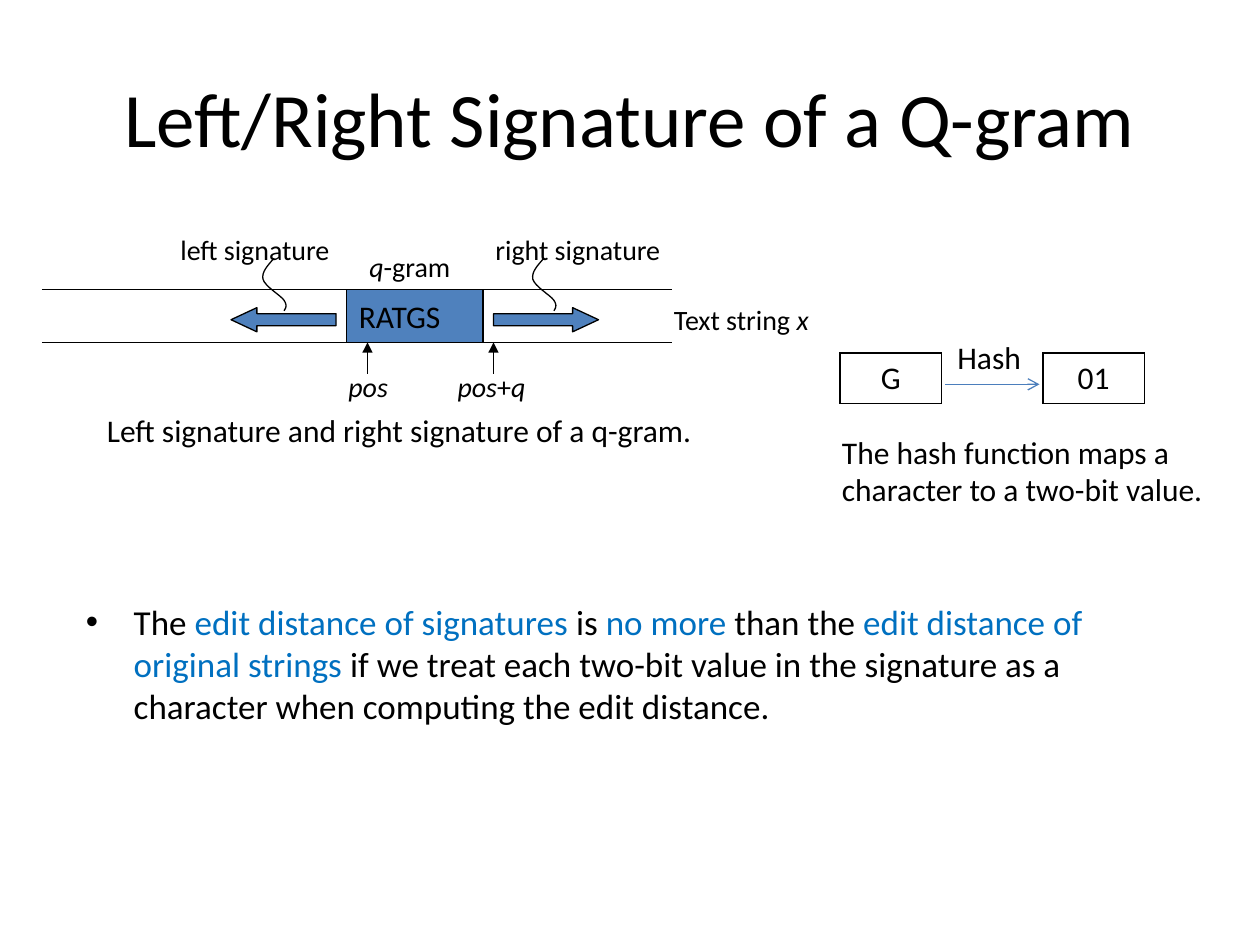
from lxml.etree import SubElement
from pptx import Presentation
from pptx.dml.color import RGBColor
from pptx.enum.shapes import MSO_CONNECTOR, MSO_SHAPE
from pptx.enum.text import MSO_ANCHOR, PP_ALIGN
from pptx.oxml import parse_xml
from pptx.oxml.ns import nsdecls, qn
from pptx.util import Inches, Pt

BLACK = RGBColor(0x00, 0x00, 0x00)
BLUE = RGBColor(0x4F, 0x81, 0xBD)
HASH_BLUE = RGBColor(0x4B, 0x7E, 0xBC)
ACCENT = RGBColor(0x00, 0x70, 0xC0)

ITALIC = {"italic": True}
MARKED = {"color": ACCENT}


def grid(*units):
    """Turn twelfths of an inch (120 columns by 90 rows) into lengths."""
    return [Inches(unit / 12) for unit in units]


def bezier(start, c1, c2, end, steps=8):
    """Points along a cubic curve, without its start."""
    for step in range(1, steps + 1):
        t = step / steps
        u = 1 - t
        yield tuple(u**3 * a + 3 * u * u * t * b + 3 * u * t * t * c + t**3 * d
                    for a, b, c, d in zip(start, c1, c2, end))


class SignatureSlide:
    font = "Calibri"
    line_width = Pt(0.75)

    def __init__(self, presentation):
        self.slide = presentation.slides.add_slide(presentation.slide_layouts[5])
        self.shapes = self.slide.shapes

    def fill_text(self, frame, parts, size, align=PP_ALIGN.LEFT):
        """Fill the first paragraph with plain strings or (text, format) pairs."""
        paragraph = frame.paragraphs[0]
        paragraph.alignment = align
        for part in parts:
            wording, changes = (part, {}) if isinstance(part, str) else part
            run = paragraph.add_run()
            run.text = wording
            look = {"name": self.font, "size": Pt(size), "color": BLACK} | changes
            run.font.color.rgb = look.pop("color")
            for key, value in look.items():
                setattr(run.font, key, value)
        return paragraph

    def title(self, wording):
        heading = self.shapes.title
        place = zip(("left", "top", "width", "height"), grid(6, 3.6, 108, 15))
        for key, value in place:
            setattr(heading, key, value)
        heading.text_frame.vertical_anchor = MSO_ANCHOR.MIDDLE
        self.fill_text(heading.text_frame, [wording], 44, PP_ALIGN.CENTER)

    def label(self, column, row, columns, *parts, size=16, rows=4.4):
        frame = self.shapes.add_textbox(*grid(column, row, columns, rows)).text_frame
        frame.word_wrap = True
        return self.fill_text(frame, parts, size)

    def bullet(self, column, row, columns, rows, *parts):
        paragraph = self.label(column, row, columns, *parts, size=20, rows=rows)
        properties = paragraph._p.get_or_add_pPr()
        properties.set("marL", str(Inches(0.38)))
        properties.set("indent", str(-Inches(0.38)))
        SubElement(properties, qn("a:buFont"), typeface="Arial")
        SubElement(properties, qn("a:buChar"), char="•")

    def outline(self, item, color=BLACK):
        item.line.color.rgb = color
        item.line.width = self.line_width

    def block(self, kind, column, row, columns, rows):
        block = self.shapes.add_shape(kind, *grid(column, row, columns, rows))
        block.shadow.inherit = False
        block.fill.solid()
        block.fill.fore_color.rgb = BLUE
        self.outline(block)
        return block

    def line(self, start, end, color=BLACK, head=None):
        line = self.shapes.add_connector(MSO_CONNECTOR.STRAIGHT, *grid(*start, *end))
        self.outline(line, color)
        if head:
            SubElement(line.line._get_or_add_ln(), qn("a:tailEnd"), type=head)
        SubElement(line._element.spPr, qn("a:effectLst"))

    def squiggle(self, left, top):
        """Wavy leader from a signature's label down to its arrow."""
        start = (left + 1.2, top)
        waves = [((0.6, 0.7), (0, 1.3), (0.15, 2)),
                 ((0.35, 2.7), (1.8, 3.5), (2.15, 4)),
                 ((2.5, 4.5), (2.3, 4.8), (2.15, 5))]
        points = [start]
        for wave in waves:
            points.extend(bezier(points[-1], *((left + x, top + y) for x, y in wave)))
        builder = self.shapes.build_freeform(*grid(*start))
        builder.add_line_segments([grid(*point) for point in points[1:]], close=False)
        leader = builder.convert_to_shape()
        leader.shadow.inherit = False
        leader.fill.background()
        self.outline(leader)

    def boxes(self, column, row, columns, rows, entries):
        """One table row; only the cells with an entry are framed."""
        table = self.shapes.add_table(
            1, len(entries), *grid(column, row, columns, rows)).table
        table.first_row = table.horz_banding = False
        for cell, entry in zip(table.rows[0].cells, entries):
            cell.fill.background()
            self.fill_text(cell.text_frame, [entry] if entry else [], 18,
                           PP_ALIGN.CENTER)
            for position, side in enumerate("LRTB"):
                framed = entry or side in "LR"
                paint = (f'<a:solidFill><a:srgbClr val="{BLACK}"/></a:solidFill>'
                         if framed else "<a:noFill/>")
                border = parse_xml(
                    f'<a:ln{side} {nsdecls("a")} w="{Pt(1)}">{paint}</a:ln{side}>')
                cell._tc.get_or_add_tcPr().insert(position, border)


def main():
    presentation = Presentation()
    presentation.slide_width, presentation.slide_height = grid(120, 90)
    page = SignatureSlide(presentation)
    page.title("Left/Right Signature of a Q-gram")

    page.bullet(7, 56.6, 108, 13,
                "The ", ("edit distance of signatures ", MARKED), "is ",
                ("no more ", MARKED), "than the ",
                ("edit distance of original strings ", MARKED),
                "if we treat each two-bit value in the signature as a character "
                "when computing the edit distance.")

    # Hash function
    page.boxes(80, 33.6, 29, 4.8, ["G", "", "01"])
    page.line((90, 36.6), (99, 36.6), HASH_BLUE, "arrow")
    page.label(90, 31.6, 11, "Hash", size=18)
    page.label(79, 40.6, 38, "The hash function maps a character to a two-bit value.",
               size=18, rows=8.5)

    # Text string with its q-gram
    top, bottom = 27.6, 32.6
    for edge in (top, bottom):
        page.line((4, edge), (64, edge))
    gram = page.block(MSO_SHAPE.RECTANGLE, 33, top, 13, bottom - top)
    gram.text_frame.vertical_anchor = MSO_ANCHOR.MIDDLE
    page.fill_text(gram.text_frame, ["RATGS"], 18)
    for column in (35, 47):
        page.line((column, bottom + 3), (column, bottom), head="triangle")

    # Signatures on both sides
    for kind, column, leader in ((MSO_SHAPE.LEFT_ARROW, 22, 24.9),
                                 (MSO_SHAPE.RIGHT_ARROW, 47, 50.6)):
        arrow = page.block(kind, column, 29.3, 10, 2.3)
        arrow.adjustments[1] = 1.07
        page.squiggle(leader, 24.6)

    page.label(16, 21.6, 18, "left signature")
    page.label(46, 21.6, 21, "right signature")
    page.label(34, 23.2, 11, ("q", ITALIC), "-gram")
    page.label(32, 34.6, 8, ("pos", ITALIC))
    page.label(42.4, 34.6, 11, ("pos", ITALIC), "+", ("q", ITALIC))
    page.label(63, 28.2, 16, "Text string ", ("x", ITALIC))
    page.label(9, 38.6, 59, "Left signature and right signature of a q-gram.", size=18)

    presentation.save("out.pptx")


if __name__ == "__main__":
    main()
